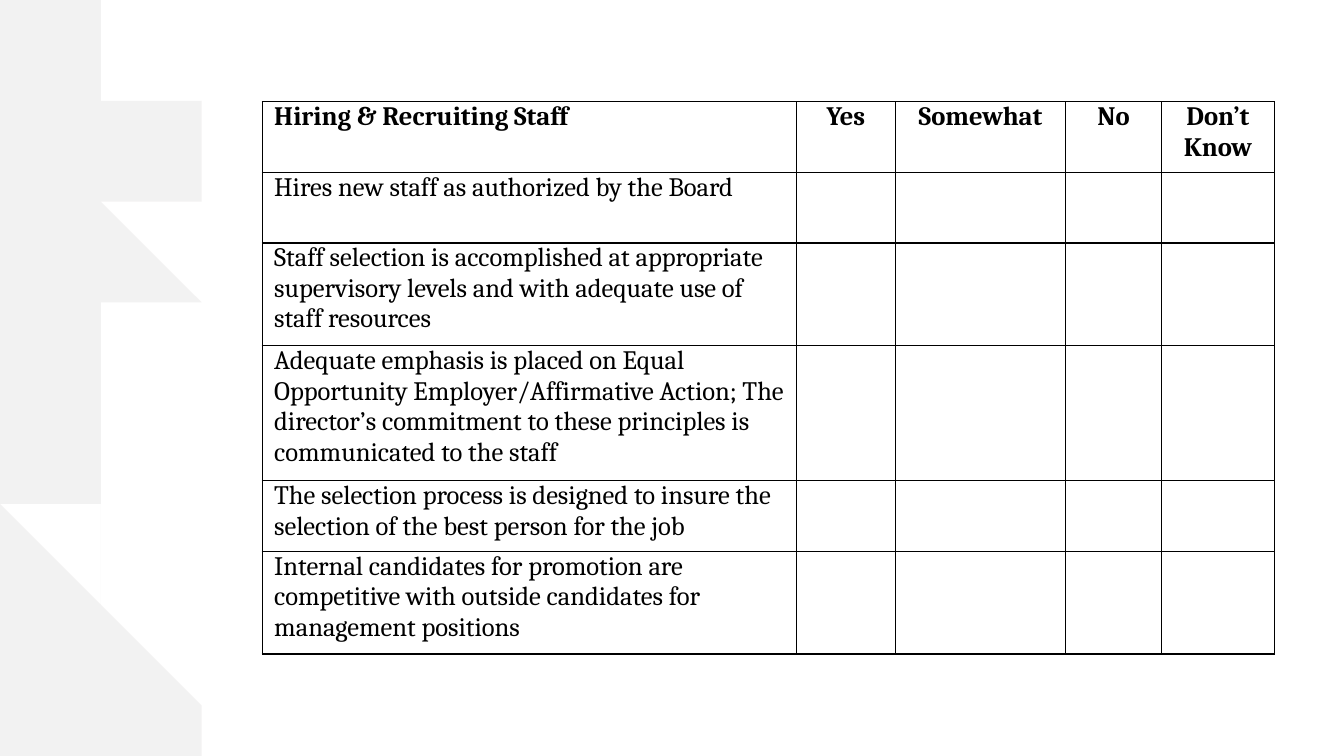
import pptx
import pptx.util
import pptx.dml.color
import pptx.enum.text
import pptx.oxml
import pptx.oxml.ns
import lxml.etree

Inches = pptx.util.Inches
RGB = pptx.dml.color.RGBColor.from_string
ALIGN = pptx.enum.text.PP_ALIGN
COLORS = {"ink": "000000", "brush": "E7E6E6"}
FONT = {"name": "Cambria", "size": pptx.util.Pt(19)}
CELL = {"margin_left": Inches(0.12), "margin_right": Inches(0.12),
        "margin_top": 0, "margin_bottom": 0}
PLAIN = {"first_row": False, "horz_banding": False}

WIDTHS = [5.3, 0.98, 1.69, 0.95, 1.12]
HEIGHTS = [0.7, 0.7, 1.02, 1.34, 0.7, 1.02]
HEADS = ["Hiring & Recruiting Staff", "Yes", "Somewhat", "No", "Don’t Know"]
ITEMS = [
    "Hires new staff as authorized by the Board",
    "Staff selection is accomplished at appropriate supervisory levels "
    "and with adequate use of staff resources",
    "Adequate emphasis is placed on Equal Opportunity Employer/Affirmative Action; "
    "The director’s commitment to these principles is communicated to the staff",
    "The selection process is designed to insure the selection of the best person for the job",
    "Internal candidates for promotion are competitive with outside candidates "
    "for management positions",
]
EDGE = [
    (0, 0), (1.51, 0), (1.85, 0.12), (1.45, 0.1), (1.8, 0.41), (1.25, 0.37),
    (1.49, 0.61), (0.37, 0.51), (1.39, 1), (1.27, 1.06), (1.66, 1.33),
    (1.5, 1.35), (1.94, 1.75), (1.78, 1.81), (2.12, 2.2), (1.71, 2.27),
    (2.1, 2.42), (0.84, 2.07), (1.36, 2.4), (1.55, 2.62), (1.93, 2.75),
    (1.1, 2.79), (0.96, 3.11), (0.55, 3.22), (1.15, 3.64), (0.75, 3.53),
    (0.69, 3.71), (0.97, 4), (0.91, 4.56), (0.74, 4.6), (0.7, 4.83),
    (0.39, 4.79), (0.73, 5.05), (0.37, 5.03), (1.03, 5.64), (0.63, 5.46),
    (1.15, 5.99), (1.34, 6.33), (1.11, 6.29), (1.69, 6.78), (1.09, 6.67),
    (1.57, 7), (1.66, 7.23), (2.17, 7.5), (0, 7.5),
]


def put(thing, values):
    for key, value in values.items():
        setattr(thing, key, value)


def add_brush(slide, left, top):
    pen = slide.shapes.build_freeform(*EDGE[0], scale=Inches(1))
    pen.add_line_segments(EDGE[1:], close=True)
    brush = pen.convert_to_shape(Inches(left), Inches(top))
    brush.shadow.inherit = False
    brush.fill.solid()
    brush.fill.fore_color.rgb = RGB(COLORS["brush"])
    brush.line.fill.background()
    tint = brush.fill._xPr.find(".//" + pptx.oxml.ns.qn("a:srgbClr"))
    lxml.etree.SubElement(tint, pptx.oxml.ns.qn("a:alpha"), val="50000")


def add_edges(cell):
    props = cell._tc.get_or_add_tcPr()
    for side in "LRTB":
        props.append(pptx.oxml.parse_xml(
            f'<a:ln{side} {pptx.oxml.ns.nsdecls("a")} w="12700"><a:solidFill>'
            f'<a:srgbClr val="{COLORS["ink"]}"/></a:solidFill></a:ln{side}>'))


def add_form(slide, left, top, width, height):
    rows = [HEADS] + [[item] + [""] * (len(HEADS) - 1) for item in ITEMS]
    form = slide.shapes.add_table(len(rows), len(HEADS), Inches(left), Inches(top),
                                  Inches(width), Inches(height)).table
    put(form, PLAIN)
    for col, size in zip(form.columns, WIDTHS):
        col.width = Inches(size)
    for row, size in zip(form.rows, HEIGHTS):
        row.height = Inches(size)
    for r, texts in enumerate(rows):
        for c, text in enumerate(texts):
            cell = form.cell(r, c)
            put(cell, CELL)
            add_edges(cell)
            cell.fill.background()
            if text:
                para = cell.text_frame.paragraphs[0]
                para.alignment = ALIGN.CENTER if c else ALIGN.LEFT
                run = para.add_run()
                run.text = text
                put(run.font, {**FONT, "bold": r == 0})
                run.font.color.rgb = RGB(COLORS["ink"])


def main():
    deck = pptx.Presentation()
    put(deck, {"slide_width": Inches(13.33), "slide_height": Inches(7.5)})
    slide = deck.slides.add_slide(deck.slide_layouts[6])
    add_brush(slide, 0, 0)
    add_form(slide, 2.6, 1.01, sum(WIDTHS), sum(HEIGHTS))
    deck.save("out.pptx")


if __name__ == "__main__":
    main()
